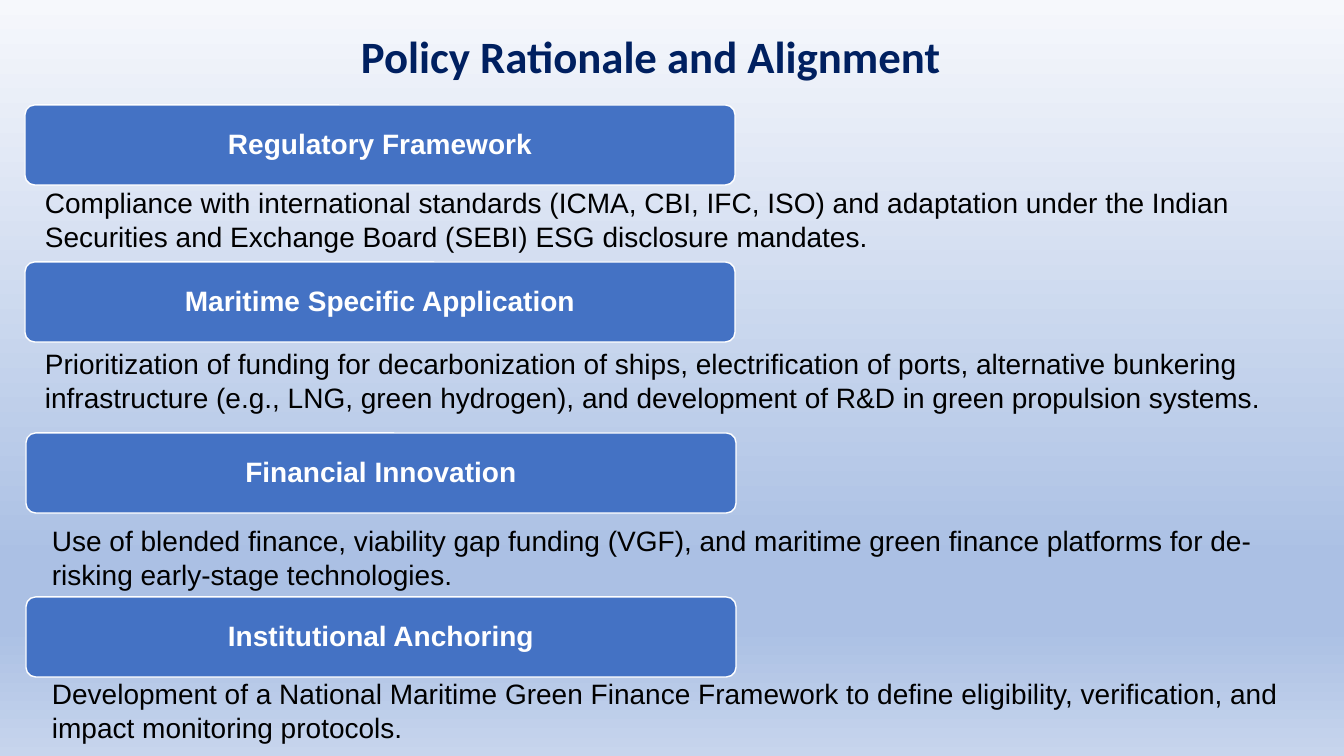
from copy import deepcopy

from pptx import Presentation
from pptx.dml.color import RGBColor
from pptx.enum.shapes import MSO_SHAPE as Shape
from pptx.enum.text import MSO_ANCHOR as Anchor, PP_ALIGN as Align
from pptx.oxml.ns import qn
from pptx.util import Pt

# Content
TITLE = "Policy Rationale and Alignment"
TITLE_BOX = (344, 23, 614, 65)
BACKGROUND_STOPS = [(0, "F6F8FC"), (0.74, "ABC0E4"), (0.83, "ABC0E4"), (1, "C7D5ED")]
# heading, heading left and top, body, body left, top and width
SECTIONS = [
    ("Regulatory Framework", 25, 105,
     "Compliance with international standards (ICMA, CBI, IFC, ISO) and adaptation under "
     "the Indian Securities and Exchange Board (SEBI) ESG disclosure mandates.",
     35, 181, 1255),
    ("Maritime Specific Application", 25, 262,
     "Prioritization of funding for decarbonization of ships, electrification of ports, "
     "alternative bunkering infrastructure (e.g., LNG, green hydrogen), and development "
     "of R&D in green propulsion systems.",
     35, 342, 1242),
    ("Financial Innovation", 26, 433,
     "Use of blended finance, viability gap funding (VGF), and maritime green finance "
     "platforms for de-risking early-stage technologies.",
     42, 519, 1242),
    ("Institutional Anchoring", 26, 597,
     "Development of a National Maritime Green Finance Framework to define eligibility, "
     "verification, and impact monitoring protocols.",
     42, 672, 1247),
]
HEADING_SIZE = (710, 80)
BODY_HEIGHT = 78
EMU_PER_PX = 914400 / 100.8


def px(*lengths):
    return [round(length * EMU_PER_PX) for length in lengths]


def color(hex_string):
    return RGBColor.from_string(hex_string)


def write(shape, text, font_name, size, hex_string, bold=False, align=Align.LEFT):
    shape.text_frame.word_wrap = True
    paragraph = shape.text_frame.paragraphs[0]
    paragraph.text = text
    paragraph.alignment = align
    font = paragraph.font
    font.name, font.size, font.bold = font_name, Pt(size), bold
    font.color.rgb = color(hex_string)
    return paragraph


def paint_background(slide):
    fill = slide.background.fill
    fill.gradient()
    fill.gradient_angle = 270  # counter-clockwise, so the colours run downwards
    stop_list = slide.element.find(".//" + qn("a:gsLst"))
    while len(stop_list) < len(BACKGROUND_STOPS):
        stop_list.append(deepcopy(stop_list[0]))
    for stop, (position, hex_string) in zip(fill.gradient_stops, BACKGROUND_STOPS):
        stop.position = position
        stop.color.rgb = color(hex_string)


def add_heading(slide, text, left, top):
    shape = slide.shapes.add_shape(Shape.ROUNDED_RECTANGLE, *px(left, top, *HEADING_SIZE))
    shape.adjustments[0] = 0.12
    shape.shadow.inherit = False
    shape.fill.solid()
    shape.fill.fore_color.rgb = color("4472C4")
    shape.line.color.rgb = color("FFFFFF")
    shape.line.width = Pt(1)
    shape.text_frame.vertical_anchor = Anchor.MIDDLE
    paragraph = write(shape, text, "Arial", 20, "FFFFFF", True, Align.CENTER)
    paragraph.line_spacing = 0.9


def main():
    presentation = Presentation()
    presentation.slide_width, presentation.slide_height = px(1344, 756)
    slide = presentation.slides.add_slide(presentation.slide_layouts[5])
    paint_background(slide)

    # Title
    title = slide.shapes.title
    title.left, title.top, title.width, title.height = px(*TITLE_BOX)
    title.text_frame.vertical_anchor = Anchor.MIDDLE
    write(title, TITLE, "Calibri", 32, "002060", True, Align.CENTER)

    # Headings with the text below each
    for heading, left, top, body, body_left, body_top, body_width in SECTIONS:
        add_heading(slide, heading, left, top)
        box = slide.shapes.add_textbox(*px(body_left, body_top, body_width, BODY_HEIGHT))
        write(box, body, "Arial", 20, "000000")

    presentation.save("out.pptx")


if __name__ == "__main__":
    main()
